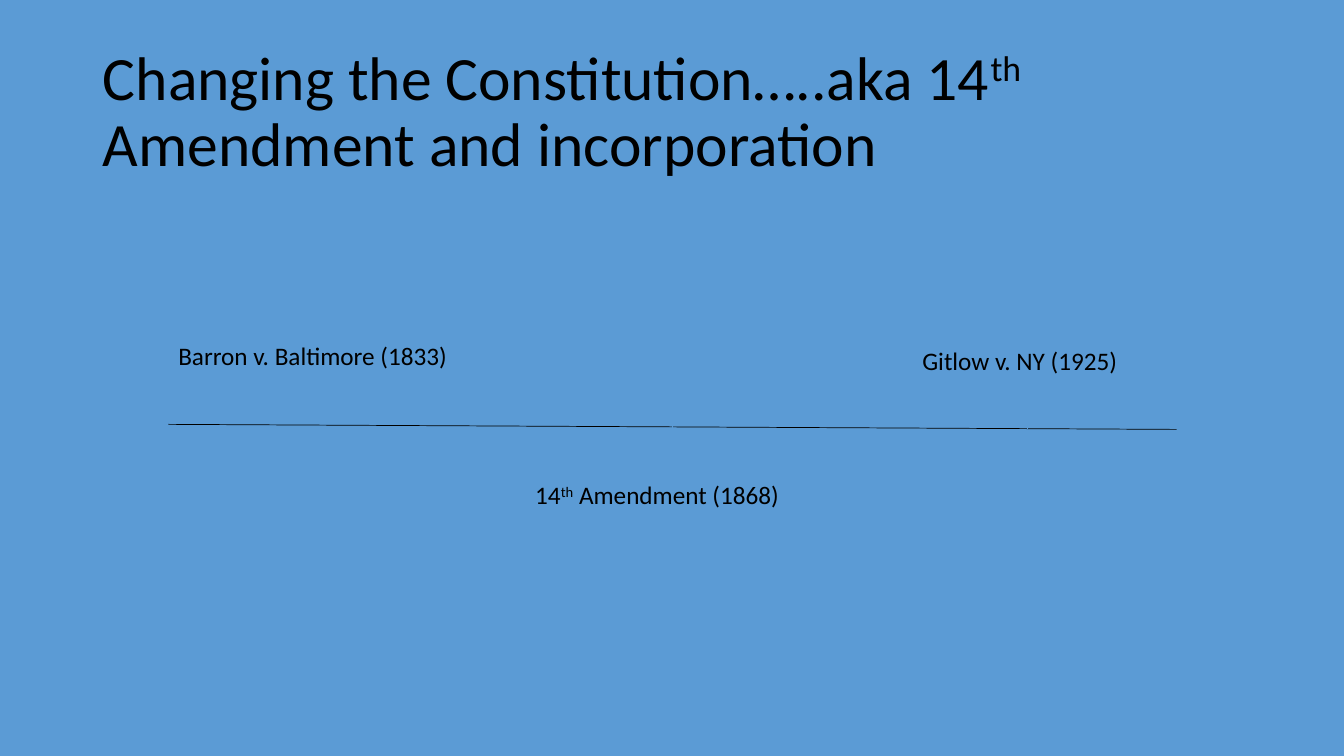
"""Build a timeline slide on the 14th Amendment and incorporation."""
from dataclasses import dataclass

from lxml import etree
from pptx import Presentation
from pptx import util as u
from pptx.dml.color import RGBColor
from pptx.enum import shapes, text
from pptx.oxml import ns


@dataclass(frozen=True)
class Theme:
    back: RGBColor = RGBColor(0x5B, 0x9B, 0xD5)
    ink: RGBColor = RGBColor(0, 0, 0)
    font: str = "Calibri"
    head: int = 44
    body: int = 18
    rule: float = 0.5


theme = Theme()


def write(words, frame, size=theme.body, space=None, anchor=text.MSO_ANCHOR.TOP):
    """Fill a frame with text; parts between carets are superscript."""
    frame.word_wrap = True
    frame.vertical_anchor = anchor
    para = frame.paragraphs[0]
    para.alignment = text.PP_ALIGN.LEFT
    para.line_spacing = space
    for i, part in enumerate(words.split("^")):
        run = para.add_run()
        run.text = part
        run.font.name = theme.font
        run.font.size = u.Pt(size)
        run.font.color.rgb = theme.ink
        if i % 2:
            run.font._element.set("baseline", "30000")


deck = Presentation()
deck.slide_width, deck.slide_height = u.Inches(13.33), u.Inches(7.5)
slide = deck.slides.add_slide(deck.slide_layouts[5])
slide.background.fill.solid()
slide.background.fill.fore_color.rgb = theme.back

title = slide.shapes.title
title.left, title.top = u.Inches(0.92), u.Inches(0.4)
title.width, title.height = u.Inches(11.5), u.Inches(1.45)
write("Changing the Constitution…..aka 14^th^ Amendment and incorporation",
      title.text_frame, size=theme.head, space=0.9, anchor=text.MSO_ANCHOR.MIDDLE)

lines = [
    (1.67, 4.21, 11.67, 4.26, theme.ink),
    (3.12, 4.19, 3.12, 3.76, theme.back),
    (6.67, 4.21, 6.67, 4.64, theme.back),
    (10.19, 3.83, 10.19, 4.26, theme.back),
]
for *ends, tint in lines:
    line = slide.shapes.add_connector(
        shapes.MSO_CONNECTOR.STRAIGHT, *map(u.Inches, ends))
    line.line.color.rgb = tint
    line.line.width = u.Pt(theme.rule)
    etree.SubElement(line._element.spPr, ns.qn("a:effectLst"))

events = [
    ("Barron v. Baltimore (1833)", 1.67, 3.33, 2.9),
    ("14^th^ Amendment (1868)", 5.21, 4.71, 2.95),
    ("Gitlow v. NY (1925)", 9.05, 3.38, 2.26),
]
for words, left, top, width in events:
    box = slide.shapes.add_textbox(*map(u.Inches, (left, top, width, 0.4)))
    write(words, box.text_frame)
    box.text_frame.auto_size = text.MSO_AUTO_SIZE.SHAPE_TO_FIT_TEXT

deck.save("out.pptx")
